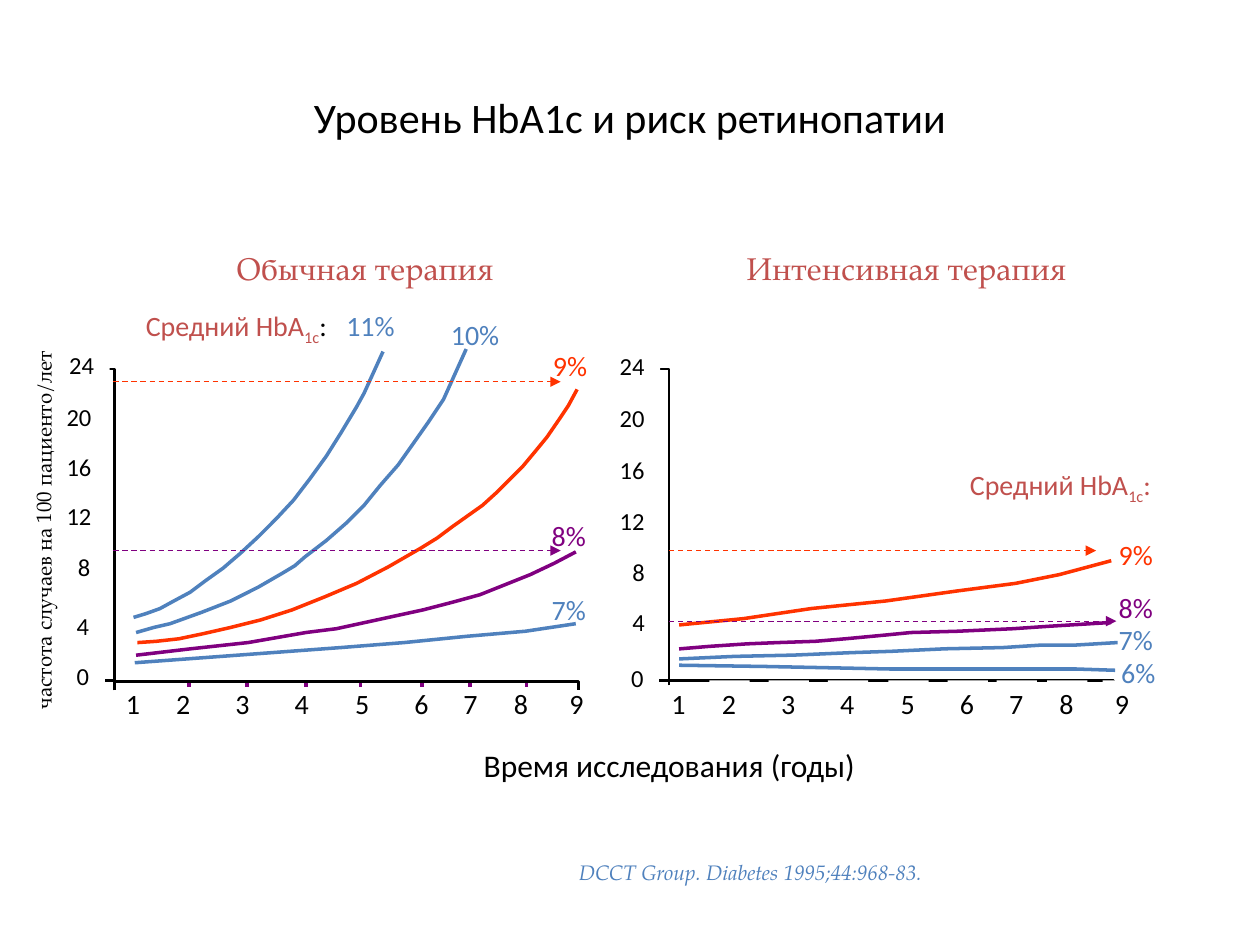
from dataclasses import dataclass

from lxml.etree import SubElement
from pptx import Presentation
from pptx.dml.color import RGBColor
from pptx.enum.dml import MSO_LINE
from pptx.enum.shapes import MSO_CONNECTOR
from pptx.enum.text import MSO_ANCHOR, MSO_AUTO_SIZE, PP_ALIGN
from pptx.oxml.ns import qn
from pptx.util import Inches, Pt


@dataclass(frozen=True)
class Theme:
    black: str = "000000"
    white: str = "FFFFFF"
    blue: str = "4F81BD"
    red: str = "C0504D"
    orange: str = "FF3300"
    purple: str = "800080"
    sans: str = "Calibri"
    serif: str = "TeX Gyre Pagella"
    title: int = 24
    heading: int = 18
    label: int = 16
    scale: int = 14
    small: int = 12
    curve: float = 2
    axis: float = 1.5
    level: float = 0.75


class Painter:
    def __init__(self, slide, theme):
        self.slide = slide
        self.theme = theme

    def stroke(self, line, color, width):
        line.color.rgb = RGBColor.from_string(color)
        line.width = Pt(width)

    def text(self, box, runs, size, color, font=None, align=PP_ALIGN.LEFT,
             wrap=False, filled=False, italic=False, margins=True,
             anchor=MSO_ANCHOR.TOP, fit=True, rotation=0):
        sp = self.slide.shapes.add_textbox(*map(Inches, box))
        sp.rotation = rotation
        if filled:
            sp.fill.solid()
            sp.fill.fore_color.rgb = RGBColor.from_string(self.theme.white)
        tf = sp.text_frame
        tf.word_wrap = wrap
        tf.auto_size = MSO_AUTO_SIZE.SHAPE_TO_FIT_TEXT if fit else MSO_AUTO_SIZE.NONE
        tf.vertical_anchor = anchor
        if not margins:
            tf.margin_left = tf.margin_right = tf.margin_top = tf.margin_bottom = 0
        p = tf.paragraphs[0]
        p.alignment = align
        for content, run_color, subscript in runs if isinstance(runs, list) else [(runs, color, False)]:
            r = p.add_run()
            r.text = content
            r.font.name = font or self.theme.sans
            r.font.size = Pt(size)
            r.font.italic = italic
            r.font.color.rgb = RGBColor.from_string(run_color)
            if subscript:
                r.font._element.set("baseline", "-25000")

    def polyline(self, points, color, width):
        start, *rest = [(Inches(x), Inches(y)) for x, y in points]
        builder = self.slide.shapes.build_freeform(*start)
        builder.add_line_segments(rest, close=False)
        sp = builder.convert_to_shape()
        sp.shadow.inherit = False
        sp.fill.background()
        self.stroke(sp.line, color, width)

    def line(self, x1, y1, x2, y2, color, width, arrow=False):
        cx = self.slide.shapes.add_connector(
            MSO_CONNECTOR.STRAIGHT, *map(Inches, (x1, y1, x2, y2)))
        self.stroke(cx.line, color, width)
        if arrow:
            cx.line.dash_style = MSO_LINE.DASH
            SubElement(cx.line._get_or_add_ln(), qn("a:tailEnd"), type="triangle")
        SubElement(cx._element.spPr, qn("a:effectLst"))

    def axes(self, x, right, base, foot):
        t = self.theme
        self.polyline([(x - 0.08, 2.93), (x, 2.93), (x, 5.4), (x - 0.08, 5.4)], t.black, t.axis)
        self.polyline([(x, foot), (x, base), (right, base), (right, foot)], t.black, t.axis)

    def scale(self, positions, zero_filled):
        t = self.theme
        for value, (x, y) in zip(range(24, -1, -4), positions):
            self.text((x, y, 0.42 if value > 9 else 0.31, 0.33), str(value),
                      t.scale, t.black, filled=value > 0 or zero_filled)

    def years(self, x, filled):
        t = self.theme
        for year, offset in enumerate(YEAR_OFFSETS, 1):
            self.text((x + offset, 5.4, 0.32, 0.37), str(year), t.label, t.black,
                      filled=filled and year > 1)

    def percent(self, x, y, value, color, width=0.52):
        self.text((x, y, width, 0.37), f"{value}%", self.theme.label, color)

    def mean_label(self, x, y, colon_color):
        t = self.theme
        runs = [("Средний HbA", t.red, False), ("1c", t.red, True), (":", colon_color, False)]
        self.text((x, y, 1.93, 0.37), runs, t.label, t.red)


YEAR_OFFSETS = (0, 0.4, 0.87, 1.34, 1.82, 2.29, 2.68, 3.08, 3.52)
YEAR_TICKS = (1.5, 1.96, 2.43, 2.86, 3.35, 3.73, 4.18)

INTENSIVE_9 = [(5.39, 4.96), (5.9, 4.91), (6.44, 4.83), (7.03, 4.77), (7.6, 4.69),
               (8.06, 4.63), (8.41, 4.56), (8.82, 4.45)]
INTENSIVE_8 = [(5.39, 5.15), (5.63, 5.13), (5.93, 5.11), (6.17, 5.1), (6.47, 5.09),
               (6.71, 5.07), (7.03, 5.04), (7.23, 5.02), (7.6, 5.01), (8.04, 4.99),
               (8.33, 4.97), (8.82, 4.94)]
INTENSIVE_7 = [(5.39, 5.23), (5.83, 5.21), (6.3, 5.2), (6.76, 5.18), (7.07, 5.17),
               (7.5, 5.15), (7.96, 5.14), (8.27, 5.12), (8.54, 5.12), (8.87, 5.1)]
INTENSIVE_6 = [(5.39, 5.28), (6.07, 5.29), (7.06, 5.31), (8.54, 5.31), (8.85, 5.32)]

USUAL_11 = [(1.06, 4.9), (1.16, 4.87), (1.27, 4.83), (1.38, 4.77), (1.51, 4.7),
            (1.63, 4.61), (1.77, 4.51), (1.91, 4.39), (2.05, 4.26), (2.19, 4.12),
            (2.33, 3.97), (2.46, 3.8), (2.59, 3.62), (2.71, 3.43), (2.83, 3.23),
            (2.89, 3.12), (2.94, 3.01), (3.04, 2.79)]
USUAL_10 = [(1.08, 5.02), (1.22, 4.98), (1.35, 4.95), (1.6, 4.86), (1.83, 4.77),
            (2.05, 4.66), (2.24, 4.55), (2.34, 4.49), (2.42, 4.42), (2.59, 4.29),
            (2.75, 4.15), (2.89, 4.01), (3.02, 3.85), (3.16, 3.69), (3.28, 3.52),
            (3.4, 3.35), (3.52, 3.17), (3.7, 2.77)]
USUAL_9 = [(1.09, 5.1), (1.24, 5.09), (1.42, 5.07), (1.61, 5.03), (1.83, 4.98),
           (2.07, 4.92), (2.32, 4.84), (2.57, 4.74), (2.83, 4.63), (3.08, 4.5),
           (3.34, 4.35), (3.47, 4.27), (3.59, 4.18), (3.83, 4.01), (3.94, 3.91),
           (4.05, 3.8), (4.15, 3.7), (4.25, 3.58), (4.34, 3.47), (4.43, 3.34),
           (4.51, 3.22), (4.58, 3.09)]
USUAL_8 = [(1.08, 5.2), (1.51, 5.15), (1.97, 5.1), (2.43, 5.02), (2.67, 4.99),
           (2.9, 4.94), (3.36, 4.84), (3.59, 4.78), (3.81, 4.72), (4.01, 4.64),
           (4.21, 4.56), (4.4, 4.47), (4.57, 4.38)]
USUAL_7 = [(1.07, 5.26), (1.75, 5.21), (2.7, 5.14), (3.21, 5.1), (3.71, 5.05),
           (4.17, 5.01), (4.57, 4.95)]


def draw_intensive(s, t):
    for points, color in ((INTENSIVE_8, t.purple), (INTENSIVE_7, t.blue), (INTENSIVE_6, t.blue)):
        s.polyline(points, color, t.curve)
    s.axes(5.31, 8.84, 5.4, 5.44)
    s.scale([(4.82, 2.74), (4.82, 3.15), (4.82, 3.56), (4.82, 3.97),
             (4.92, 4.37), (4.92, 4.77), (4.91, 5.21)], zero_filled=False)
    s.years(5.23, filled=True)
    s.mean_label(7.6, 3.66, t.red)
    for x, y, value, color in ((8.78, 4.22, 9, t.orange), (8.78, 4.64, 8, t.purple),
                               (8.78, 4.89, 7, t.blue), (8.8, 5.15, 6, t.blue)):
        s.percent(x, y, value, color)
    s.polyline(INTENSIVE_9, t.orange, t.curve)


def draw_usual(s, t):
    for points, color in ((USUAL_11, t.blue), (USUAL_10, t.blue), (USUAL_9, t.orange),
                          (USUAL_8, t.purple), (USUAL_7, t.blue)):
        s.polyline(points, color, t.curve)
    for y in (3.3, 3.71, 4.12):
        s.line(0.76, y, 0.84, y, t.purple, t.curve)
    for x in YEAR_TICKS:
        s.line(x, 5.45, x, 5.4, t.purple, t.curve)
    s.axes(0.91, 4.59, 5.41, 5.48)
    s.scale([(0.45, 2.73), (0.43, 3.14), (0.43, 3.54), (0.43, 3.93),
             (0.52, 4.33), (0.51, 4.8), (0.51, 5.2)], zero_filled=True)
    s.years(0.9, filled=False)
    s.mean_label(1.06, 2.4, t.black)
    for x, y, value, color, width in ((2.65, 2.4, 11, t.blue, 0.65), (3.48, 2.47, 10, t.blue, 0.65),
                                      (4.29, 2.72, 9, t.orange, 0.52), (4.28, 4.07, 8, t.purple, 0.52),
                                      (4.28, 4.65, 7, t.blue, 0.52)):
        s.percent(x, y, value, color, width)


def main():
    t = Theme()
    prs = Presentation()
    prs.slide_width, prs.slide_height = Inches(10), Inches(7.5)
    s = Painter(prs.slides.add_slide(prs.slide_layouts[6]), t)

    draw_intensive(s, t)
    s.text((0.5, 0.3, 9, 1.25), "Уровень HbA1c и риск ретинопатии", t.title, t.black,
           align=PP_ALIGN.CENTER, wrap=True, anchor=MSO_ANCHOR.MIDDLE, fit=False)
    draw_usual(s, t)

    for x, heading in ((0.54, "Обычная терапия"), (4.84, "Интенсивная терапия")):
        s.text((x, 1.93, 4.71, 0.4), heading, t.heading, t.red, t.serif,
               align=PP_ALIGN.CENTER, wrap=True)
    s.text((3.74, 5.87, 3.72, 0.4), "Время исследования (годы)", t.heading, t.black)
    s.text((-2.02, 3.21, 4.73, 0.3), "частота случаев на 100 пациенто/лет",
           t.small, t.black, t.serif, wrap=True, rotation=270)
    s.text((3.19, 6.82, 4.17, 0.24), "DCCT Group. Diabetes 1995;44:968-83. ", t.small, t.blue,
           t.serif, align=PP_ALIGN.RIGHT, wrap=True, italic=True, margins=False, fit=False)

    for x1, x2, y, color in ((0.9, 4.45, 3.03, t.orange), (5.31, 8.7, 4.37, t.orange),
                             (0.9, 4.45, 4.37, t.purple), (5.31, 8.86, 4.93, t.purple)):
        s.line(x1, y, x2, y, color, t.level, arrow=True)

    prs.save("out.pptx")


if __name__ == "__main__":
    main()
